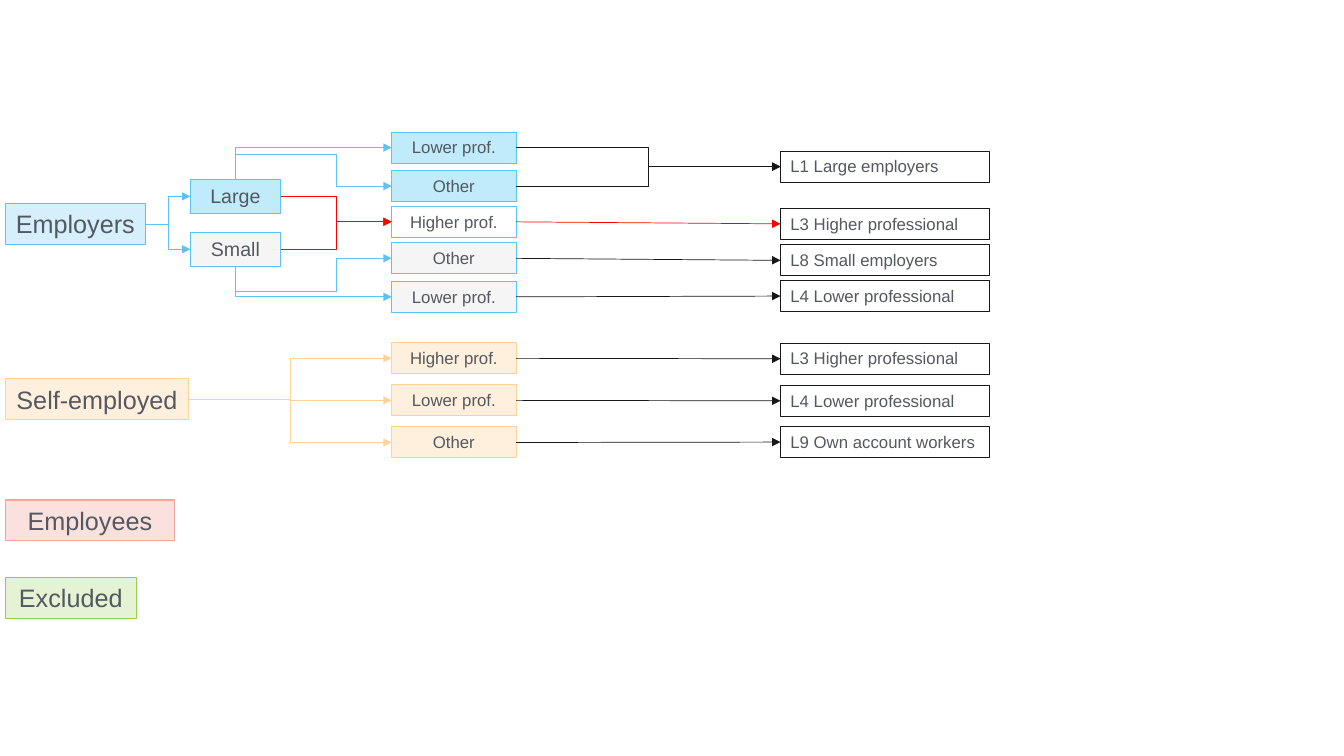
import pptx
import pptx.util
import pptx.oxml
import pptx.oxml.ns
from pptx.dml.color import RGBColor
from pptx.enum.shapes import MSO_CONNECTOR, MSO_SHAPE
from pptx.enum.text import MSO_ANCHOR, MSO_AUTO_SIZE, PP_ALIGN

Cm, Pt, qn = pptx.util.Cm, pptx.util.Pt, pptx.oxml.ns.qn

TEXT = RGBColor(0x54, 0x58, 0x60)
BLACK = RGBColor(0x18, 0x17, 0x17)
RED = RGBColor(0xFF, 0x00, 0x00)
SKY = RGBColor(0x5B, 0xC3, 0xF5)
BLUE = RGBColor(0x00, 0xB0, 0xF0)
GREY = RGBColor(0xD9, 0xD9, 0xD9)
CREAM = RGBColor(0xFF, 0xF0, 0xDD)
SAND = RGBColor(0xFF, 0xD3, 0x98)
PINK = RGBColor(0xFA, 0xE1, 0xDE)
ROSE = RGBColor(0xEF, 0xA6, 0x9B)
GREEN = RGBColor(0x92, 0xD0, 0x50)
CLEAR = {SKY, BLUE, GREY, GREEN}  # fills shown at 25 %

deck = pptx.Presentation()
deck.slide_width, deck.slide_height = Cm(33.87), Cm(19.05)
slide = deck.slides.add_slide(deck.slide_layouts[6])


def add_box(text, left, top, width, high, size, fill, edge, align=PP_ALIGN.CENTER):
    box = slide.shapes.add_shape(
        MSO_SHAPE.RECTANGLE, Cm(left), Cm(top), Cm(width), Cm(high))
    box.shadow.inherit = False
    box.line.color.rgb, box.line.width = edge, Pt(0.75)
    if fill is None:
        box.fill.background()
    else:
        box.fill.solid()
        box.fill.fore_color.rgb = fill
        if fill in CLEAR:
            tint = box.element.spPr.find(qn("a:solidFill"))[0]
            tint.append(pptx.oxml.parse_xml(
                f'<a:alpha {pptx.oxml.ns.nsdecls("a")} val="25000"/>'))
    frame = box.text_frame
    look = {"word_wrap": True, "vertical_anchor": MSO_ANCHOR.TOP,
            "auto_size": MSO_AUTO_SIZE.SHAPE_TO_FIT_TEXT}
    for key, val in look.items():
        setattr(frame, key, val)
    para = frame.paragraphs[0]
    para.alignment = align
    run = para.add_run()
    run.text = text
    for key, val in {"name": "Arial", "size": Pt(size)}.items():
        setattr(run.font, key, val)
    run.font.color.rgb = TEXT
    return box


def add_wire(kind, ends, color):
    wire = slide.shapes.add_connector(kind, *ends)
    wire.line.color.rgb, wire.line.width = color, Pt(0.5)
    space = pptx.oxml.ns.nsdecls("a")
    wire.line.fill  # the arrowhead follows the line fill
    wire.get_or_add_ln().append(
        pptx.oxml.parse_xml(f'<a:tailEnd {space} type="triangle"/>'))
    wire.element.spPr.append(pptx.oxml.parse_xml(f"<a:effectLst {space}/>"))
    return wire


# Status groups on the left
group = {}
for name, top, width, fill, edge in [
    ("Employers", 5.13, 3.54, SKY, SKY),
    ("Self-employed", 9.55, 4.63, CREAM, SAND),
    ("Employees", 12.6, 4.27, PINK, ROSE),
    ("Excluded", 14.56, 3.31, GREEN, GREEN),
]:
    group[name] = add_box(name, 0.13, top, width, 1.03, 18, fill, edge)

# Size of employer
large = add_box("Large", 4.8, 4.52, 2.27, 0.86, 14, BLUE, SKY)
small = add_box("Small", 4.8, 5.85, 2.27, 0.86, 14, GREY, SKY)

# Type of work
jobs = [
    add_box(name, 9.87, top, 3.14, 0.78, 12, fill, edge)
    for name, top, fill, edge in [
        ("Lower prof.", 3.33, BLUE, SKY),
        ("Other", 4.3, BLUE, SKY),
        ("Higher prof.", 5.2, None, SKY),
        ("Other", 6.12, GREY, SKY),
        ("Lower prof.", 7.09, GREY, SKY),
        ("Higher prof.", 8.64, CREAM, SAND),
        ("Lower prof.", 9.7, CREAM, SAND),
        ("Other", 10.76, CREAM, SAND),
    ]
]

# Final classes on the right
ranks = [
    add_box(name, 19.67, top, 5.27, 0.78, 12, None, BLACK, PP_ALIGN.LEFT)
    for name, top in [
        ("L1 Large employers", 3.81),
        ("L3 Higher professional", 5.25),
        ("L8 Small employers", 6.17),
        ("L4 Lower professional", 7.07),
        ("L3 Higher professional", 8.65),
        ("L4 Lower professional", 9.71),
        ("L9 Own account workers", 10.75),
    ]
]

# Arrows from a right side to a left side
BENT, FLAT = MSO_CONNECTOR.ELBOW, MSO_CONNECTOR.STRAIGHT
links = [(group["Employers"], size, BENT, SKY) for size in (large, small)]
links += [(size, jobs[2], BENT, RED) for size in (large, small)]
links += [(group["Self-employed"], job, BENT, SAND) for job in jobs[5:]]
links += [(job, ranks[0], BENT, BLACK) for job in jobs[:2]]
links += [(job, rank, FLAT, RED if job is jobs[2] else BLACK)
          for job, rank in zip(jobs[2:], ranks[1:])]
for start, end, kind, color in links:
    wire = add_wire(kind, (0, 0, 0, 0), color)
    wire.begin_connect(start, 3)
    wire.end_connect(end, 1)

# Arrows that leave a top or bottom edge: a turned elbow about its centre
for size, job, edge, bends in [
    (large, jobs[1], 0, 4), (large, jobs[0], 0, 2),
    (small, jobs[4], 1, 2), (small, jobs[3], 1, 4),
]:
    x1, y1 = size.left + size.width // 2, size.top + edge * size.height
    x2, y2 = job.left, job.top + job.height // 2
    midx, midy = (x1 + x2) // 2, (y1 + y2) // 2
    wide, tall = abs(y2 - y1), x2 - x1
    side = -1 if y2 > y1 else 1
    wire = add_wire(BENT, (
        midx + wide // 2, midy + side * tall // 2,
        midx - wide // 2, midy - side * tall // 2), SKY)
    form = wire.element.spPr
    form.find(qn("a:xfrm")).set("rot", str((270 if side < 0 else 90) * 60000))
    geom = form.find(qn("a:prstGeom"))
    geom.set("prst", f"bentConnector{bends}")
    if bends == 4:
        reach = -round(Cm(0.64) / wide * 100000)
        for name, val in [("adj1", reach), ("adj2", 64400)]:
            geom.find(qn("a:avLst")).append(pptx.oxml.parse_xml(
                f'<a:gd {pptx.oxml.ns.nsdecls("a")} name="{name}" fmla="val {val}"/>'))

deck.save("out.pptx")
